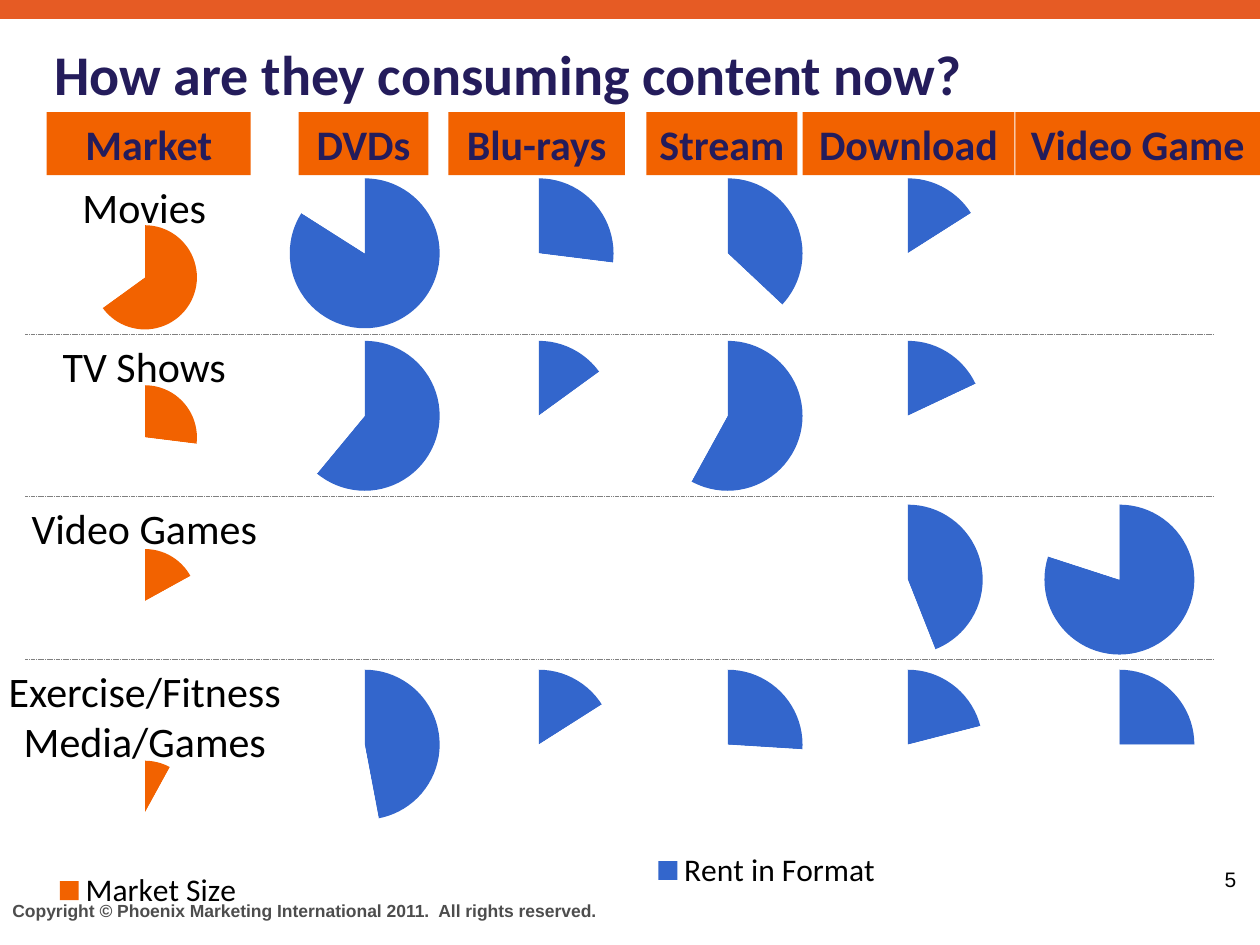
import pptx
import pptx.chart.data
import pptx.dml.color
import pptx.enum.chart
import pptx.enum.dml
import pptx.enum.shapes
import pptx.enum.text
import pptx.oxml
import pptx.oxml.ns
import pptx.util

Inches = pptx.util.Inches
RGB = pptx.dml.color.RGBColor
ALIGN = pptx.enum.text.PP_ALIGN
ANCHOR = pptx.enum.text.MSO_ANCHOR
qn = pptx.oxml.ns.qn

ORANGE = RGB(0xF2, 0x62, 0x00)
BAND = RGB(0xE6, 0x5B, 0x24)
BLUE = RGB(0x33, 0x66, 0xCC)
NAVY = RGB(0x24, 0x1C, 0x5B)
GRAY = RGB(0x80, 0x80, 0x80)
DARK = RGB(0x4D, 0x4D, 0x4D)
BLACK = RGB(0, 0, 0)
WHITE = RGB(0xFF, 0xFF, 0xFF)

PIE_PLOT = (0.02, 0.02, 0.96, 0.93)
KEY_PLOT = (0.02, 0.9, 0.06, 0.05)

# Column heading, left, width, left of its pies (None: no format pies)
HEADS = [
    ("Market", 0.37, 1.62, None),
    ("DVDs", 2.37, 1.03, 1.94),
    ("Blu-rays", 3.56, 1.4, 3.32),
    ("Stream", 5.13, 1.2, 4.82),
    ("Download", 6.37, 1.68, 6.25),
    ("Video Game", 8.06, 1.94, 7.93),
]

# Row label, its box, top of format pies, top of market pie, market %, format %
ROWS = [
    ("Movies", (-0.01, 1.39, 2.31, 0.5), 1.39, 1.77, 65,
     (84, 27, 37, 16, None)),
    ("TV Shows", (-0.01, 2.65, 2.31, 0.5), 2.68, 3.04, 27,
     (61, 15, 58, 18, None)),
    ("Video Games", (-0.01, 3.94, 2.31, 0.5), 3.98, 4.34, 17,
     (None, None, None, 44, 80)),
    ("Exercise/Fitness Media/Games", (-0.07, 5.23, 2.44, 0.91), 5.29, 6.02, 8,
     (47, 16, 26, 21, 25)),
]


class Deck:
    def __init__(self, font="Calibri", size=24):
        self.font, self.size = font, size
        self.prs = pptx.Presentation()
        self.prs.slide_width = Inches(10)
        self.prs.slide_height = Inches(7.5)
        self.slide = self.prs.slides.add_slide(self.prs.slide_layouts[5])

    def label(self, shape, text, color, size=None, font=None, bold=False,
              align=ALIGN.LEFT, anchor=ANCHOR.TOP, wrap=True):
        frame = shape.text_frame
        frame.text = text
        frame.word_wrap = wrap
        frame.vertical_anchor = anchor
        par = frame.paragraphs[0]
        par.alignment = align
        for run in par.runs:
            run.font.name = font or self.font
            run.font.size = pptx.util.Pt(size or self.size)
            run.font.bold = bold
            run.font.color.rgb = color

    def title(self, box, text):
        shape = self.slide.shapes.title
        shape.left, shape.top, shape.width, shape.height = map(Inches, box)
        self.label(shape, text, NAVY, size=32, bold=True,
                   anchor=ANCHOR.MIDDLE)

    def text(self, box, text, color=BLACK, **style):
        shape = self.slide.shapes.add_textbox(*map(Inches, box))
        self.label(shape, text, color, **style)

    def rect(self, box, fill, text=None):
        kind = pptx.enum.shapes.MSO_SHAPE.RECTANGLE
        shape = self.slide.shapes.add_shape(kind, *map(Inches, box))
        shape.shadow.inherit = False
        shape.fill.solid()
        shape.fill.fore_color.rgb = fill
        shape.line.fill.background()
        if text:
            self.label(shape, text, NAVY, bold=True, align=ALIGN.CENTER,
                       wrap=False)

    def rule(self, left, right, y):
        kind = pptx.enum.shapes.MSO_CONNECTOR.STRAIGHT
        line = self.slide.shapes.add_connector(
            kind, Inches(left), Inches(y), Inches(right), Inches(y))
        line.line.color.rgb = GRAY
        line.line.width = pptx.util.Pt(0.25)
        line.line.dash_style = pptx.enum.dml.MSO_LINE.SQUARE_DOT
        line._element.spPr.append(pptx.oxml.parse_xml(
            f'<a:effectLst {pptx.oxml.ns.nsdecls("a")}/>'))

    def pie(self, box, color, vals, cats=("1", "2"), plot=PIE_PLOT):
        data = pptx.chart.data.CategoryChartData()
        data.categories = cats
        data.add_series("Series 1", vals)
        kind = pptx.enum.chart.XL_CHART_TYPE.PIE
        chart = self.slide.shapes.add_chart(
            kind, *map(Inches, box), data).chart
        chart.has_title = chart.has_legend = False
        chart.font.name, chart.font.size = "Arial", pptx.util.Pt(18)
        chart.font.color.rgb = BLACK
        for i, fill in enumerate((color, WHITE)):
            point = chart.plots[0].series[0].points[i].format
            point.fill.solid()
            point.fill.fore_color.rgb = fill
            point.line.fill.background()
        self.place(chart, plot)
        return chart

    def place(self, chart, plot):
        # Fixed inner plot area on a clear chart background
        space = chart._chartSpace
        area = space.find(".//" + qn("c:plotArea"))
        for old in area.findall(qn("c:layout")):
            area.remove(old)
        parts = "".join(f'<c:{tag} val="{val}"/>'
                        for tag, val in zip("xywh", plot))
        area.insert(0, pptx.oxml.parse_xml(
            f'<c:layout {pptx.oxml.ns.nsdecls("c")}><c:manualLayout>'
            '<c:layoutTarget val="inner"/><c:xMode val="edge"/>'
            f'<c:yMode val="edge"/>{parts}</c:manualLayout></c:layout>'))
        space.find(qn("c:chart")).addnext(pptx.oxml.parse_xml(
            f'<c:spPr {pptx.oxml.ns.nsdecls("c", "a")}><a:noFill/>'
            '<a:ln><a:noFill/></a:ln></c:spPr>'))

    def key(self, box, color, name):
        # Empty pie that shows only the legend entry of its first slice
        chart = self.pie(box, color, (0, 0), (name, "No"), KEY_PLOT)
        chart.has_legend = True
        legend = chart.legend
        legend.position = pptx.enum.chart.XL_LEGEND_POSITION.BOTTOM
        legend.include_in_layout = False
        legend.font.name, legend.font.size = self.font, pptx.util.Pt(18)
        legend.font.color.rgb = BLACK
        legend._element.find(qn("c:legendPos")).addnext(pptx.oxml.parse_xml(
            f'<c:legendEntry {pptx.oxml.ns.nsdecls("c")}>'
            '<c:idx val="1"/><c:delete val="1"/></c:legendEntry>'))


def main():
    deck = Deck()

    # Frame of the page
    deck.rect((0, 0, 10, 0.15), BAND)
    deck.text((9.51, 6.83, 0.4, 0.3), "5", size=12, font="Arial",
              align=ALIGN.RIGHT, wrap=False)
    deck.text((0, 7.09, 6.58, 0.29),
              "Copyright © Phoenix Marketing International 2011.  "
              "All rights reserved.",
              DARK, size=10, font="Arial", bold=True)
    deck.title((0.33, 0.08, 9.25, 1), "How are they consuming content now?")

    # Column headings
    for name, left, width, _ in HEADS:
        deck.rect((left, 0.89, width, 0.5), ORANGE, name)

    # Rows: format pies, label, market pie
    for name, box, top, low, share, rents in ROWS:
        for head, rent in zip(HEADS[1:], rents):
            if rent is not None:
                deck.pie((head[3], top, 1.91, 1.28), BLUE, (rent, 100 - rent))
        deck.text(box, name, align=ALIGN.CENTER)
        deck.pie((0.48, low, 1.34, 0.89), ORANGE, (share, 100 - share))

    # Row dividers
    for i in range(3):
        deck.rule(0.2, 9.63, 2.65 + 1.29 * i)

    # Keys
    deck.key((4.77, 6.62, 2.63, 0.49), BLUE, "Rent in Format")
    deck.key((-0.14, 6.78, 2.63, 0.49), ORANGE, "Market Size")

    deck.prs.save("out.pptx")


if __name__ == "__main__":
    main()
